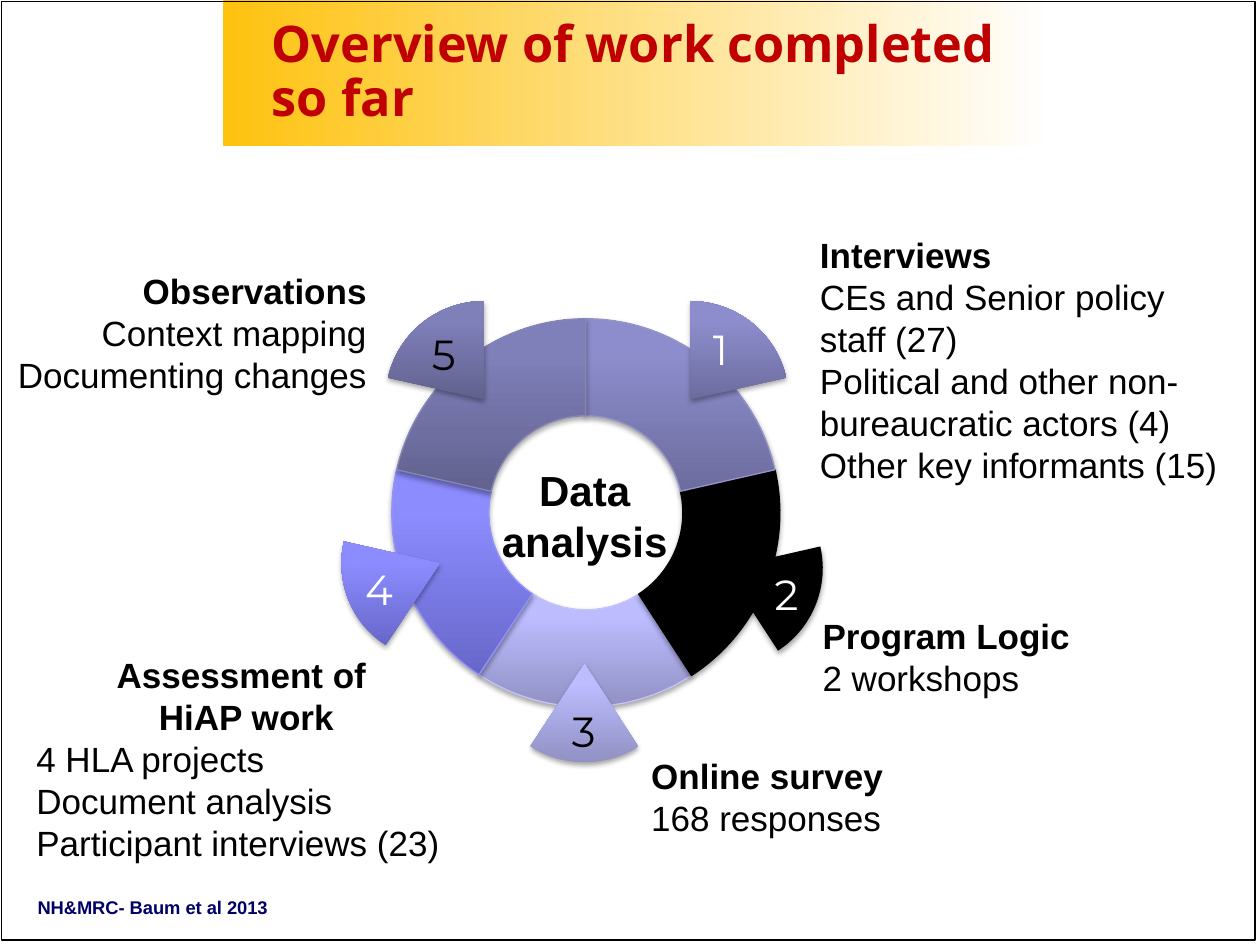
from math import cos, radians, sin

from lxml.etree import SubElement
from pptx import Presentation
from pptx.dml.color import RGBColor
from pptx.enum.shapes import MSO_SHAPE
from pptx.enum.text import MSO_ANCHOR, MSO_AUTO_SIZE, PP_ALIGN
from pptx.oxml.ns import qn
from pptx.util import Inches, Pt

# Grid: 100 columns by 75 rows
COLUMNS, ROWS = 100, 75
CELL = Inches(0.1)

COLORS = {
    "black": "000000", "white": "FFFFFF", "gold": "FEC20F",
    "red": "C00000", "navy": "000066",
}
LEFT, CENTER, RIGHT = PP_ALIGN.LEFT, PP_ALIGN.CENTER, PP_ALIGN.RIGHT

# Ring geometry in cells, angles clockwise from the top
RING_CENTER = (46.5, 40.7)
OUTER, INNER, TAB_RADIUS = 15.4, 7.7, 7.8
STEP_DEGREES = 2

# Back to front: number, angles, fill (bottom to top), line, tab tip, digit place, digit colour
SEGMENTS = [
    ("3", (147, 213.4), ("9191C4", "BCBCFF", "BEBEFF"), "C4C4FB", (46.4, 52.7), (44.4, 55.5), "black"),
    ("2", (77.2, 147), ("000000",), "000000", (57.5, 45.1), (60.5, 44.6), "white"),
    ("1", (0, 77.2), ("6C6C9E", "8D8DCD", "8C8CCF"), "9494C9", (54.8, 31.7), (55.6, 25.2), "white"),
    ("4", (213.4, 282.8), ("6767CA", "8C8CFF", "8E8EFF"), "9393FC", (34.9, 44.7), (28, 44.2), "white"),
    ("5", (282.8, 360), ("62628F", "7F7FBA", "7E7EBC"), "8686B6", (38.4, 31.7), (33.3, 25.6), "black"),
]

TITLE = "Overview of work completed so far"
HUB = "Data analysis"
FOOTER = "NH&MRC- Baum et al 2013"

# Place, number of bold lines, (line, alignment)
LABELS = [
    ((64.1, 18, 33.6, 27.9), 1, [
        ("Interviews", LEFT),
        ("CEs and Senior policy staff (27)", LEFT),
        ("Political and other non-bureaucratic actors (4)", LEFT),
        ("Other key informants (15)", LEFT)]),
    ((64.3, 48.3, 33.6, 11.1), 1, [("Program Logic", LEFT), ("2 workshops", LEFT)]),
    ((50.7, 59.4, 33.6, 7.7), 1, [("Online survey", LEFT), ("168 responses", LEFT)]),
    ((1.9, 51.4, 35.3, 17.8), 2, [
        ("Assessment of ", CENTER),
        ("HiAP work", CENTER),
        ("4 HLA projects", LEFT),
        ("Document analysis", LEFT),
        ("Participant interviews (23)", LEFT)]),
    ((-0.5, 20.9, 30.6, 11.1), 1, [
        ("Observations", RIGHT), ("Context mapping", RIGHT), ("Documenting changes", RIGHT)]),
]


def cells(*values):
    return [round(value * CELL) for value in values]


def color(name):
    return RGBColor.from_string(COLORS.get(name, name))


def fill_gradient(shape, stops, degrees):
    """Fill with (percent, hex) stops along a straight line."""
    shape.fill.gradient()
    gradient = shape._element.spPr.find(qn("a:gradFill"))
    for child in list(gradient):
        gradient.remove(child)
    stop_list = SubElement(gradient, qn("a:gsLst"))
    for percent, value in stops:
        stop = SubElement(stop_list, qn("a:gs"), pos=str(percent * 1000))
        SubElement(stop, qn("a:srgbClr"), val=value)
    SubElement(gradient, qn("a:lin"), ang=str(degrees * 60000), scaled="0")


def add_shadow(shape):
    shape.shadow.inherit = False
    effects = shape._element.spPr.find(qn("a:effectLst"))
    shadow = SubElement(effects, qn("a:outerShdw"), blurRad=str(Pt(3.1)), dist=str(Pt(1.8)),
                        dir="5400000", rotWithShape="0")
    tone = SubElement(shadow, qn("a:srgbClr"), val=COLORS["black"])
    SubElement(tone, qn("a:alpha"), val="35000")


def arc(center, radius, start, end):
    count = round((end - start) / STEP_DEGREES)
    angles = [radians(start + (end - start) * i / count) for i in range(count + 1)]
    return [(center[0] + radius * sin(a), center[1] - radius * cos(a)) for a in angles]


def add_wedge(page, points, fill, line=None):
    corners = [cells(*point) for point in points]
    builder = page.shapes.build_freeform(*corners[0], scale=1.0)
    builder.add_line_segments(corners[1:], close=True)
    wedge = builder.convert_to_shape()
    if len(fill) == 1:
        wedge.fill.solid()
        wedge.fill.fore_color.rgb = color(fill[0])
    else:
        fill_gradient(wedge, zip((0, 80, 100), fill), 270)
    if line:
        wedge.line.color.rgb = color(line)
        wedge.line.width = Pt(0.75)
    else:
        wedge.line.fill.background()
    add_shadow(wedge)


def add_text(page, place, lines, bold_lines=0, wrap=True, tone="black", **font):
    box = page.shapes.add_textbox(*cells(*place))
    frame = box.text_frame
    frame.word_wrap = wrap
    frame.auto_size = MSO_AUTO_SIZE.SHAPE_TO_FIT_TEXT
    for index, (text, alignment) in enumerate(lines):
        para = frame.paragraphs[0] if index == 0 else frame.add_paragraph()
        para.alignment = alignment
        span = para.add_run()
        span.text = text
        span.font.color.rgb = color(tone)
        for key, value in {"name": "Arial", "bold": index < bold_lines, **font}.items():
            setattr(span.font, key, value)
    return box


def add_rectangle(page, place):
    box = page.shapes.add_shape(MSO_SHAPE.RECTANGLE, *cells(*place))
    box.shadow.inherit = False
    return box


def main():
    deck = Presentation()
    deck.slide_width, deck.slide_height = cells(COLUMNS, ROWS)
    page = deck.slides.add_slide(deck.slide_layouts[6])

    # Title band
    band = add_rectangle(page, (17.7, 0, 65.6, 11.6))
    fill_gradient(band, [(0, COLORS["gold"]), (100, COLORS["white"])], 0)
    band.line.fill.background()
    title = add_text(page, (20.6, 0.9, 61.7, 9.8), [(TITLE, LEFT)], 1,
                     tone="red", name="Open Sans", size=Pt(28.8))
    title.text_frame.auto_size = MSO_AUTO_SIZE.NONE
    title.text_frame.vertical_anchor = MSO_ANCHOR.MIDDLE
    title.text_frame.paragraphs[0].line_spacing = 0.9

    # Ring, then the numbered tabs over it
    for _, angles, fill, line, *_ in SEGMENTS:
        outline = arc(RING_CENTER, OUTER, *angles) + arc(RING_CENTER, INNER, *angles)[::-1]
        add_wedge(page, outline, fill, line)
    for _, angles, fill, _, tip, *_ in SEGMENTS:
        add_wedge(page, [tip] + arc(tip, TAB_RADIUS, *angles), fill)
    for number, *_, place, tone in sorted(SEGMENTS):
        add_text(page, (*place, 3.9, 5.1), [(number, LEFT)], wrap=False,
                 tone=tone, name="Montserrat", size=Pt(24))

    # Hub and labels
    add_text(page, (38.5, 36.4, 15.8, 9.1), [(HUB, CENTER)], 1, size=Pt(24))
    for place, bold_lines, lines in LABELS:
        add_text(page, place, lines, bold_lines, size=Pt(20))

    # Page border and footer
    border = add_rectangle(page, (0.1, 0.1, 99.5, 74.5))
    border.fill.background()
    border.line.color.rgb = color("black")
    border.line.width = Pt(0.75)
    add_text(page, (2, 70.6, 20.6, 2.8), [(FOOTER, LEFT)], 1, wrap=False,
             tone="navy", size=Pt(10.5))

    deck.save("out.pptx")


if __name__ == "__main__":
    main()
